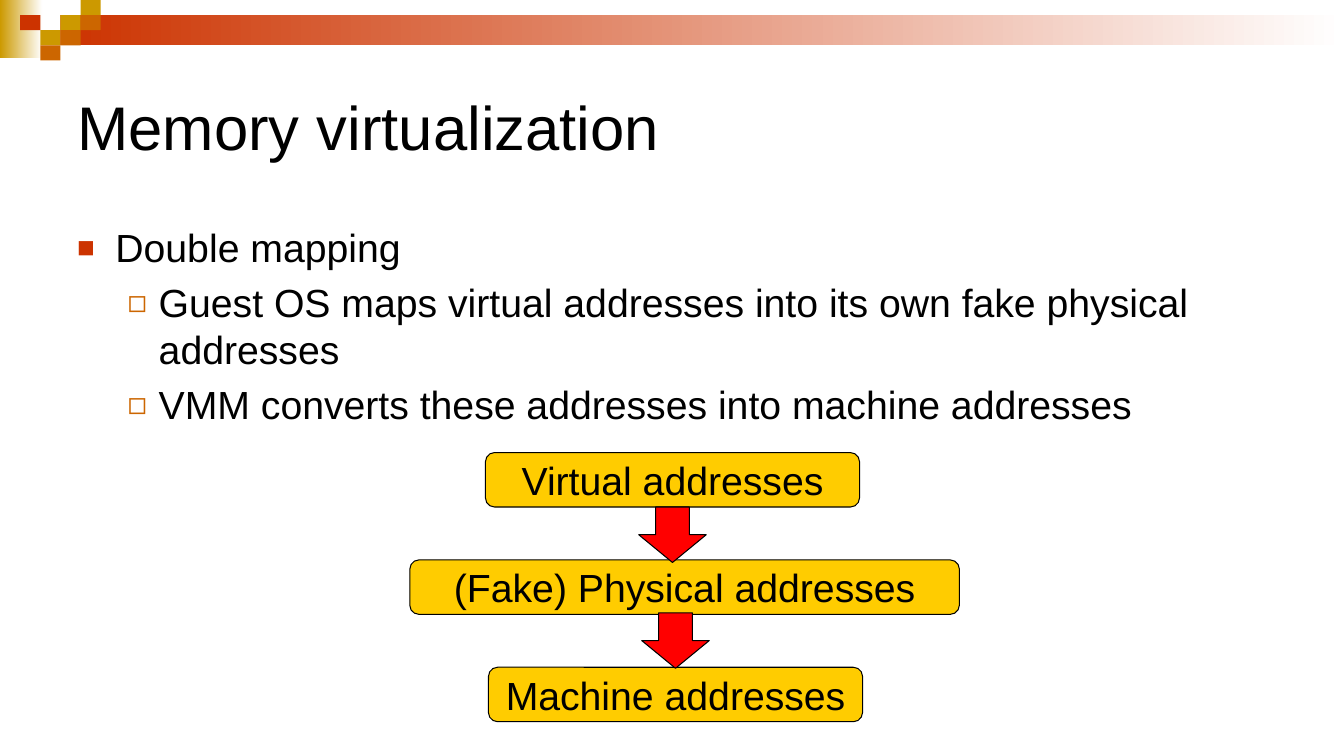
import pptx
import pptx.util
import pptx.dml.color
import pptx.enum.shapes
import pptx.enum.text
import pptx.oxml.ns
import lxml.etree

Inches = pptx.util.Inches
Pt = pptx.util.Pt
SHAPE = pptx.enum.shapes.MSO_SHAPE
ALIGN = pptx.enum.text.PP_ALIGN
ANCHOR = pptx.enum.text.MSO_ANCHOR

W, H = 13.33, 7.5
FONT = "Arial"
COLORS = {
    "gold": "CC9900", "rust": "CC3300", "orange": "CC6600", "white": "FFFFFF",
    "black": "000000", "yellow": "FFCC00", "red": "FF0000",
}

# Corner mosaic: column, row, colour
TILE_W, TILE_H = 0.2, 0.15
TILES = [
    (3, 1, "gold"), (4, 0, "gold"), (4, 1, "orange"), (2, 2, "gold"),
    (1, 1, "rust"), (3, 2, "orange"), (2, 3, "orange"),
]

# Body text: level, text
BODY = [
    (0, "Double mapping"),
    (1, "Guest OS maps virtual addresses into its own fake physical addresses"),
    (1, "VMM converts these addresses into machine addresses"),
]
# Per level: left margin, hanging indent, bullet, its colour, its size in percent
BULLETS = [(0.38, 0.38, "■", "rust", 75), (0.81, 0.31, "◻", "orange", 80)]

# Address chain: text, centre, width
CHAIN_TOP, CHAIN_STEP, BOX_H = 4.49, 1.065, 0.54
CHAIN = [
    ("Virtual addresses", 6.67, 3.71),
    ("(Fake) Physical addresses", 6.79, 5.45),
    ("Machine addresses", 6.7, 3.71),
]
ARROW_W, ARROW_H = 0.67, 0.55
ARROWS = [(6.67, 5.03), (6.7, 6.08)]


def rgb(name):
    return pptx.dml.color.RGBColor.from_string(COLORS[name])


def write(p, text, size=28, color="black", align=ALIGN.LEFT, before=0):
    p.alignment = align
    p.space_before = Pt(before)
    r = p.add_run()
    r.text = text
    r.font.name, r.font.size = FONT, Pt(size)
    r.font.color.rgb = rgb(color)


def add_bullet(p, margin, hang, char, color, percent):
    pPr = p._p.get_or_add_pPr()
    pPr.set("marL", str(Inches(margin)))
    pPr.set("indent", str(-Inches(hang)))

    def child(parent, tag, **attrs):
        return lxml.etree.SubElement(parent, pptx.oxml.ns.qn(tag), attrs)

    child(child(pPr, "a:buClr"), "a:srgbClr", val=COLORS[color])
    child(pPr, "a:buSzPct", val=str(percent * 1000))
    child(pPr, "a:buFont", typeface=FONT)
    child(pPr, "a:buChar", char=char)


def add_block(s, kind, x, y, w, h, fill, fade=False, outline=False):
    sp = s.shapes.add_shape(kind, Inches(x), Inches(y), Inches(w), Inches(h))
    sp.shadow.inherit = False
    if fade:
        sp.fill.gradient()
        sp.fill.gradient_angle = 0
        for stop, name, at in zip(sp.fill.gradient_stops, (fill, "white"), (0, 1)):
            stop.color.rgb = rgb(name)
            stop.position = at
    else:
        sp.fill.solid()
        sp.fill.fore_color.rgb = rgb(fill)
    if outline:
        sp.line.color.rgb = rgb("black")
        sp.line.width = Pt(0.75)
    else:
        sp.line.fill.background()
    return sp


def add_banner(s):
    add_block(s, SHAPE.RECTANGLE, 0, 0, 0.42, 0.58, "gold", fade=True)
    add_block(s, SHAPE.RECTANGLE, 3 * TILE_W, TILE_H, W - 3 * TILE_W, 2 * TILE_H,
              "rust", fade=True)
    for col, row, color in TILES:
        add_block(s, SHAPE.RECTANGLE, col * TILE_W, row * TILE_H, TILE_W, TILE_H, color)


def add_title(s, text):
    sp = s.shapes.title
    sp.left, sp.top = Inches(W * 0.05), Inches(0.5)
    sp.width, sp.height = Inches(W * 0.9), Inches(H * 0.2)
    sp.text_frame.vertical_anchor = ANCHOR.MIDDLE
    write(sp.text_frame.paragraphs[0], text, size=44)


def add_body(s):
    sp = s.shapes.add_textbox(Inches(W * 0.05), Inches(2.17), Inches(W * 0.9), Inches(4.25))
    tf = sp.text_frame
    tf.word_wrap = True
    for i, (level, text) in enumerate(BODY):
        p = tf.add_paragraph() if i else tf.paragraphs[0]
        p.level = level
        write(p, text, before=5.6)
        add_bullet(p, *BULLETS[level])


def add_chain(s):
    for i, (text, centre, width) in enumerate(CHAIN):
        sp = add_block(s, SHAPE.ROUNDED_RECTANGLE, centre - width / 2,
                       CHAIN_TOP + i * CHAIN_STEP, width, BOX_H, "yellow", outline=True)
        tf = sp.text_frame
        tf.word_wrap = False
        tf.vertical_anchor = ANCHOR.MIDDLE
        write(tf.paragraphs[0], text, align=ALIGN.CENTER)
    for centre, top in ARROWS:
        add_block(s, SHAPE.DOWN_ARROW, centre - ARROW_W / 2, top, ARROW_W, ARROW_H,
                  "red", outline=True)


def main():
    prs = pptx.Presentation()
    prs.slide_width, prs.slide_height = Inches(W), Inches(H)
    s = prs.slides.add_slide(prs.slide_layouts[5])
    add_banner(s)
    add_title(s, "Memory virtualization")
    add_body(s)
    add_chain(s)
    prs.save("out.pptx")


if __name__ == "__main__":
    main()
